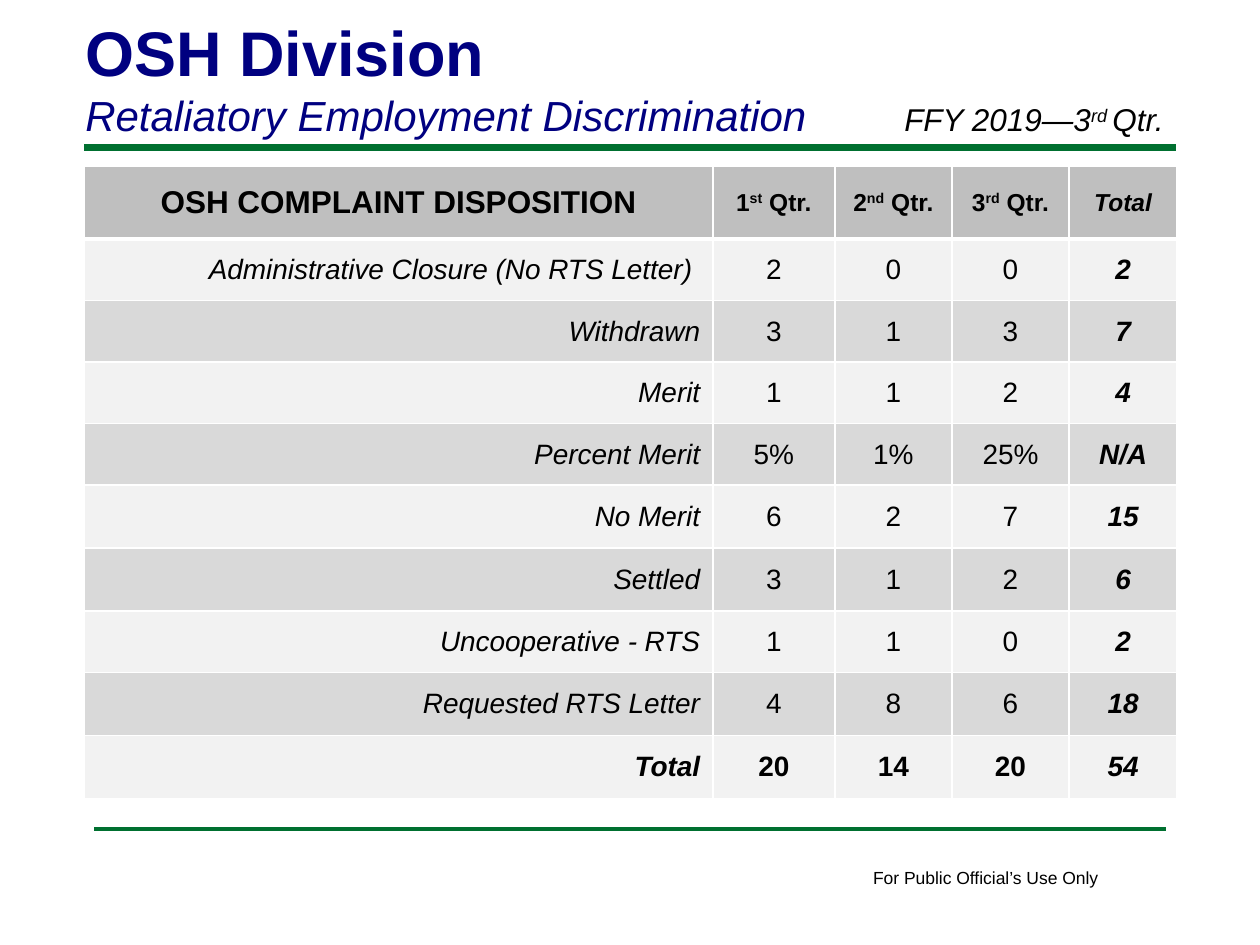
from typing import NamedTuple

from lxml import etree
from pptx import Presentation
from pptx.dml.color import RGBColor
from pptx.enum.shapes import MSO_CONNECTOR
from pptx.enum.text import MSO_ANCHOR, MSO_AUTO_SIZE, PP_ALIGN
from pptx.oxml.ns import qn
from pptx.util import Cm, Pt

STRAIGHT = MSO_CONNECTOR.STRAIGHT
MIDDLE = MSO_ANCHOR.MIDDLE
FIT_SHAPE = MSO_AUTO_SIZE.SHAPE_TO_FIT_TEXT
LEFT, CENTER, RIGHT = PP_ALIGN.LEFT, PP_ALIGN.CENTER, PP_ALIGN.RIGHT

FONT = "Arial"
COLORS = {
    "rule": "007030",
    "title": "000080",
    "text": "000000",
    "header": "BFBFBF",
    "light": "F2F2F2",
    "dark": "D9D9D9",
    "border": "FFFFFF",
}


class Line(NamedTuple):
    text: str
    size: float
    color: str = "text"
    bold: bool = False
    italic: bool = False
    align: PP_ALIGN = LEFT


class Box(NamedTuple):
    left: float
    top: float
    width: float
    height: float
    lines: list[Line]
    wrap: bool = True


class Rule(NamedTuple):
    left: float
    right: float
    top: float
    weight: float


RULES = [Rule(1.7, 23.7, 2.97, 4), Rule(1.9, 23.5, 16.71, 2)]
FOOTER = Box(17.35, 17.35, 5.1, 0.69, [Line("For Public Official’s Use Only", 10)], wrap=False)
HEADINGS = [
    Box(1.47, 0.15, 20.96, 2.82, [
        Line("OSH Division", 36, "title", bold=True),
        Line("Retaliatory Employment Discrimination", 24, "title", italic=True),
    ]),
    Box(17.98, 1.9, 6.35, 1.02, [Line("FFY 2019—3^rd ^Qtr.", 18, italic=True)]),
]
TABLE_LEFT, TABLE_TOP = 1.7, 3.35
COLUMN_WIDTHS = [12.67, 2.46, 2.36, 2.36, 2.18]
ROW_HEIGHTS = [1.47, 1.24, 1.24, 1.24, 1.24, 1.27, 1.27, 1.24, 1.27, 1.27]
ROWS = [
    ["OSH COMPLAINT DISPOSITION", "1^st^ Qtr.", "2^nd^ Qtr.", "3^rd^ Qtr.", "Total"],
    ["Administrative Closure (No RTS Letter) ", "2", "0", "0", "2"],
    ["Withdrawn", "3", "1", "3", "7"],
    ["Merit", "1", "1", "2", "4"],
    ["Percent Merit", "5%", "1%", "25%", "N/A"],
    ["No Merit", "6", "2", "7", "15"],
    ["Settled", "3", "1", "2", "6"],
    ["Uncooperative - RTS", "1", "1", "0", "2"],
    ["Requested RTS Letter", "4", "8", "6", "18"],
    ["Total", "20", "14", "20", "54"],
]


def rgb(name: str) -> RGBColor:
    return RGBColor.from_string(COLORS[name])


def write_line(p, line: Line) -> None:
    p.alignment = line.align
    for i, part in enumerate(line.text.split("^")):
        r = p.add_run()
        r.text = part
        r.font.name = FONT
        r.font.size = Pt(line.size)
        r.font.bold = line.bold
        r.font.italic = line.italic
        r.font.color.rgb = rgb(line.color)
        if i % 2:
            r.font._element.set("baseline", "30000")


def add_rule(s, rule: Rule) -> None:
    sp = s.shapes.add_connector(
        STRAIGHT, Cm(rule.left), Cm(rule.top), Cm(rule.right), Cm(rule.top))
    sp.line.color.rgb = rgb("rule")
    sp.line.width = Pt(rule.weight)
    etree.SubElement(sp._element.spPr, qn("a:effectLst"))


def add_box(s, box: Box) -> None:
    sp = s.shapes.add_textbox(Cm(box.left), Cm(box.top), Cm(box.width), Cm(box.height))
    tf = sp.text_frame
    tf.word_wrap = box.wrap
    tf.auto_size = FIT_SHAPE
    for i, line in enumerate(box.lines):
        write_line(tf.add_paragraph() if i else tf.paragraphs[0], line)


def set_borders(cell, top: float, bottom: float) -> None:
    tc_pr = cell._tc.get_or_add_tcPr()
    weights = {"a:lnL": 1, "a:lnR": 1, "a:lnT": top, "a:lnB": bottom}
    for i, (tag, weight) in enumerate(weights.items()):
        ln = etree.Element(qn(tag), w=str(Pt(weight)))
        fill = etree.SubElement(ln, qn("a:solidFill"))
        etree.SubElement(fill, qn("a:srgbClr"), val=COLORS["border"])
        tc_pr.insert(i, ln)


def cell_line(text: str, row: int, col: int) -> Line:
    is_label, is_total = col == 0, col == len(COLUMN_WIDTHS) - 1
    if row == 0:
        return Line(text, 18 if is_label else 14, bold=True, italic=is_total, align=CENTER)
    return Line(text, 16, bold=is_total or row == len(ROWS) - 1,
                italic=is_label or is_total, align=RIGHT if is_label else CENTER)


def add_dispositions(s) -> None:
    frame = s.shapes.add_table(
        len(ROWS), len(COLUMN_WIDTHS), Cm(TABLE_LEFT), Cm(TABLE_TOP),
        Cm(sum(COLUMN_WIDTHS)), Cm(sum(ROW_HEIGHTS)))
    table = frame.table
    table.first_row = table.horz_banding = False
    for column, width in zip(table.columns, COLUMN_WIDTHS):
        column.width = Cm(width)
    for row, (values, height) in enumerate(zip(ROWS, ROW_HEIGHTS)):
        table.rows[row].height = Cm(height)
        fill = "header" if row == 0 else "light" if row % 2 else "dark"
        for col, text in enumerate(values):
            cell = table.cell(row, col)
            cell.vertical_anchor = MIDDLE
            cell.fill.solid()
            cell.fill.fore_color.rgb = rgb(fill)
            set_borders(cell, 3 if row == 1 else 1, 3 if row == 0 else 1)
            write_line(cell.text_frame.paragraphs[0], cell_line(text, row, col))


def main() -> None:
    prs = Presentation()
    prs.slide_width, prs.slide_height = Cm(25.4), Cm(19.05)
    s = prs.slides.add_slide(prs.slide_layouts[6])
    for rule in RULES:
        add_rule(s, rule)
    add_box(s, FOOTER)
    add_dispositions(s)
    for box in HEADINGS:
        add_box(s, box)
    prs.save("out.pptx")


if __name__ == "__main__":
    main()
